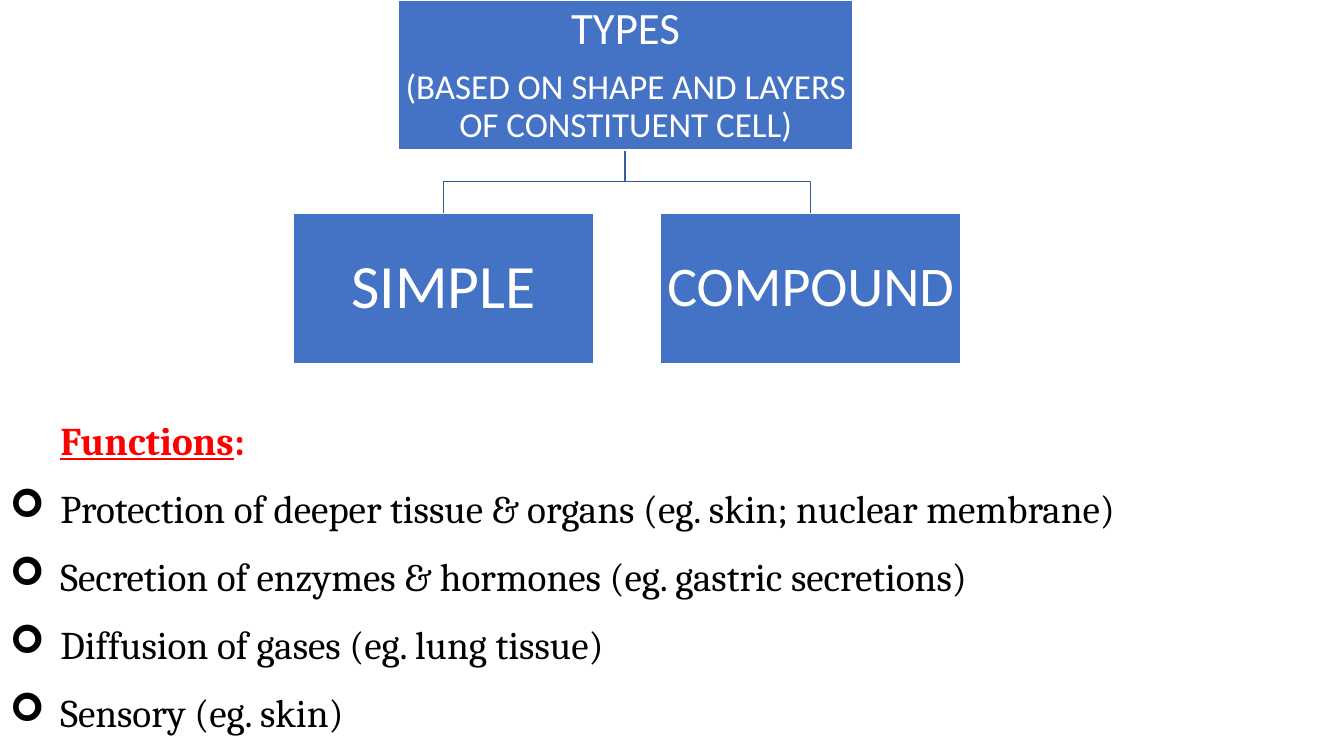
from lxml import etree
from pptx import Presentation
from pptx import util as u
from pptx.dml.color import RGBColor
from pptx.enum import shapes, text
from pptx.oxml.ns import qn

BLUE = RGBColor(0x44, 0x72, 0xC4)
LINE_BLUE = RGBColor(0x36, 0x5B, 0x9D)
WHITE = RGBColor(0xFF, 0xFF, 0xFF)
RED = RGBColor(0xFF, 0x00, 0x00)
BLACK = RGBColor(0x00, 0x00, 0x00)

deck = Presentation()
deck.slide_width, deck.slide_height = u.Inches(13.33), u.Inches(7.5)
page = deck.slides.add_slide(deck.slide_layouts[6])


def add_text(para, words, size=28, font="Cambria", color=BLACK, bold=False, underline=False):
    span = para.add_run()
    span.text = words
    span.font.size = u.Pt(size)
    span.font.name = font
    span.font.color.rgb = color
    span.font.bold = bold
    span.font.underline = underline


# Branches from the root box down to each type
ROOT_X, ROOT_BOTTOM, BRANCH_Y, TYPE_TOP = 6.2, 1.49, 1.8, 2.12
for type_x in (8.04, 4.4):
    builder = page.shapes.build_freeform(u.Inches(ROOT_X), u.Inches(ROOT_BOTTOM))
    corners = [(ROOT_X, BRANCH_Y), (type_x, BRANCH_Y), (type_x, TYPE_TOP)]
    builder.add_line_segments([(u.Inches(x), u.Inches(y)) for x, y in corners], close=False)
    branch = builder.convert_to_shape()
    branch.shadow.inherit = False
    branch.fill.background()
    branch.line.color.rgb = LINE_BLUE
    branch.line.width = u.Pt(1)

# Boxes: left, top, width, inset, lines of text with sizes
boxes = [
    (3.95, 0, 4.51, 0.02, [("TYPES", 32), ("(BASED ON SHAPE AND LAYERS OF CONSTITUENT CELL)", 25)]),
    (2.91, TYPE_TOP, 2.98, 0.03, [("SIMPLE", 44)]),
    (6.55, TYPE_TOP, 2.98, 0.03, [("COMPOUND", 40)]),
]
for left, top, width, inset, lines in boxes:
    box = page.shapes.add_shape(shapes.MSO_SHAPE.RECTANGLE, u.Inches(left), u.Inches(top),
                                u.Inches(width), u.Inches(1.49))
    box.shadow.inherit = False
    box.fill.solid()
    box.fill.fore_color.rgb = BLUE
    box.line.color.rgb = WHITE
    box.line.width = u.Pt(1)
    frame = box.text_frame
    frame.word_wrap = True
    frame.vertical_anchor = text.MSO_ANCHOR.MIDDLE
    frame.margin_left = frame.margin_right = u.Inches(inset)
    frame.margin_top = frame.margin_bottom = u.Inches(inset)
    for index, (words, size) in enumerate(lines):
        para = frame.add_paragraph() if index else frame.paragraphs[0]
        para.alignment = text.PP_ALIGN.CENTER
        para.line_spacing = 0.9
        if index < len(lines) - 1:
            para.space_after = u.Pt(round(0.35 * size))
        add_text(para, words, size=size, font="Calibri", color=WHITE)

# Functions heading and list
functions = page.shapes.add_textbox(0, u.Inches(4.01), u.Inches(13.33), u.Inches(3.34))
frame = functions.text_frame
frame.word_wrap = True
heading = frame.paragraphs[0]
add_text(heading, "Functions", color=RED, bold=True, underline=True)
add_text(heading, ":", color=RED, bold=True)
for words in (
    "Protection of deeper tissue & organs (eg. skin; nuclear membrane)",
    "Secretion of enzymes & hormones (eg. gastric secretions)",
    "Diffusion of gases (eg. lung tissue)",
    "Sensory (eg. skin)",
):
    para = frame.add_paragraph()
    props = para._p.get_or_add_pPr()
    props.set("indent", str(-u.Inches(0.5)))
    etree.SubElement(props, qn("a:buFont")).set("typeface", "Wingdings")
    etree.SubElement(props, qn("a:buChar")).set("char", "➢")
    add_text(para, words)
for para in frame.paragraphs:
    para._p.get_or_add_pPr().set("marL", str(u.Inches(0.5)))
    para.line_spacing = 1.15
    para.space_after = u.Pt(10)

deck.save("out.pptx")
